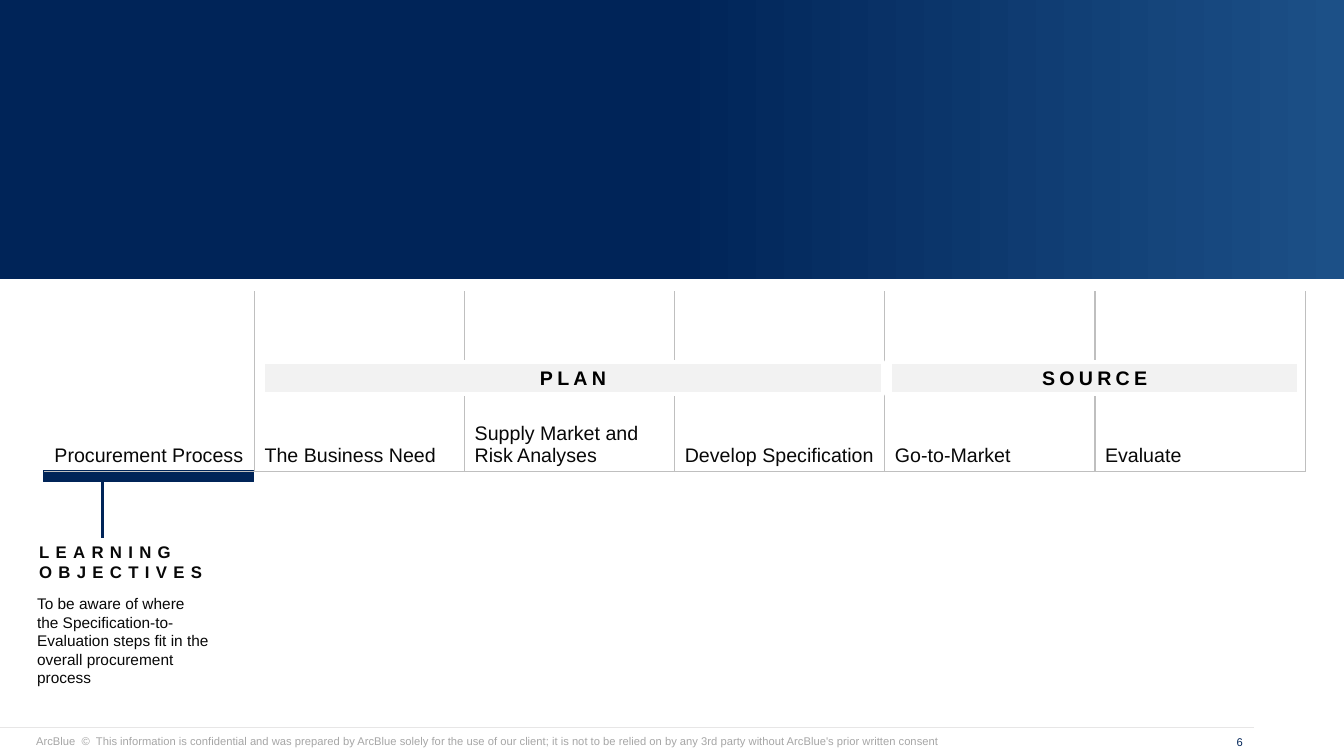
from lxml import etree
from pptx import Presentation
from pptx.dml.color import RGBColor
from pptx.enum.shapes import MSO_CONNECTOR, MSO_SHAPE
from pptx.enum.text import MSO_ANCHOR, PP_ALIGN
from pptx.oxml.ns import qn
from pptx.util import Pt

RECTANGLE, STRAIGHT = MSO_SHAPE.RECTANGLE, MSO_CONNECTOR.STRAIGHT
TOP, MIDDLE, BOTTOM = MSO_ANCHOR.TOP, MSO_ANCHOR.MIDDLE, MSO_ANCHOR.BOTTOM
LEFT, CENTER, RIGHT = PP_ALIGN.LEFT, PP_ALIGN.CENTER, PP_ALIGN.RIGHT

STEPS = ["Procurement Process", "The Business Need", "Supply Market and Risk Analyses",
         "Develop Specification", "Go-to-Market", "Evaluate"]
PHASES = [("PLAN", 187.9, 442.8), ("SOURCE", 635.8, 292.3)]  # name, left, width
OBJECTIVES_TITLE = "LEARNING OBJECTIVES"
OBJECTIVES = ("To be aware of where the Specification-to-Evaluation steps fit "
              "in the overall procurement process")
FOOTER = ("ArcBlue  ©  This information is confidential and was prepared by ArcBlue solely "
          "for the use of our client; it is not to be relied on by any 3rd party without "
          "ArcBlue's prior written consent")
PAGE_NUMBER = "6"

THEME = {
    "font": "Arial",
    "navy": "002458", "blue": "1C5087", "text": "080808", "black": "000000",
    "white": "FFFFFF", "band": "F2F2F2", "border": "BFBFBF", "rule": "E7E6E6",
    "muted": "A6A6A6",
    "step_size": 14, "title_size": 12, "body_size": 11, "footer_size": 8,
}

SLIDE_WIDTH, SLIDE_HEIGHT = 960, 540
BANNER_HEIGHT = 199
TABLE_LEFT, TABLE_TOP, COLUMN_WIDTH, TABLE_HEIGHT = 31.7, 208, 150.12, 128.9
BAND_TOP, BAND_HEIGHT = 258.5, 23
BAR_TOP, BAR_HEIGHT = 336.3, 7.9
STEM_X, STEM_TOP, STEM_BOTTOM = 73.4, 342, 384.5
FOOTER_TOP, FOOTER_HEIGHT = 521.3, 17


def color(name):
    return RGBColor.from_string(THEME[name])


def write(frame, text, size, ink, align=LEFT, bold=False, spacing=0):
    """Fill a frame's first paragraph; spacing is letter spacing in points."""
    paragraph = frame.paragraphs[0]
    run = paragraph.add_run()
    run.text = text
    if spacing:
        run._r.get_or_add_rPr().set("spc", str(int(spacing * 100)))
    paragraph.alignment = align
    font = paragraph.font
    font.name, font.size, font.bold = THEME["font"], Pt(THEME[size]), bold
    font.color.rgb = color(ink)


def set_insets(frame, left, top, right, bottom):
    frame.margin_left, frame.margin_top = Pt(left), Pt(top)
    frame.margin_right, frame.margin_bottom = Pt(right), Pt(bottom)


def add_text(slide, box, text, size, ink, anchor=TOP, insets=(7.2, 3.6, 7.2, 3.6), **style):
    frame = slide.shapes.add_textbox(*map(Pt, box)).text_frame
    frame.word_wrap = True
    frame.vertical_anchor = anchor
    set_insets(frame, *insets)
    write(frame, text, size, ink, **style)


def add_rectangle(slide, box, fill=None, line=None, line_width=0.75):
    shape = slide.shapes.add_shape(RECTANGLE, *map(Pt, box))
    shape.shadow.inherit = False
    if fill:
        shape.fill.solid()
        shape.fill.fore_color.rgb = color(fill)
    if line:
        shape.line.color.rgb = color(line)
        shape.line.width = Pt(line_width)
    else:
        shape.line.fill.background()
    return shape


def add_line(slide, start, end, ink, width):
    line = slide.shapes.add_connector(STRAIGHT, *map(Pt, start + end))
    line.line.color.rgb = color(ink)
    line.line.width = Pt(width)
    etree.SubElement(line._element.spPr, qn("a:effectLst"))


def set_borders(cell, visible_sides):
    properties = cell._tc.get_or_add_tcPr()
    for side in "LRTB":
        border = etree.SubElement(properties, qn(f"a:ln{side}"), w=str(Pt(1)))
        if side in visible_sides:
            fill = etree.SubElement(border, qn("a:solidFill"))
            etree.SubElement(fill, qn("a:srgbClr"), val=THEME["border"])
        else:
            etree.SubElement(border, qn("a:noFill"))


def add_banner(slide):
    fill = add_rectangle(slide, (0, 0, SLIDE_WIDTH, BANNER_HEIGHT)).fill
    fill.gradient()
    fill.gradient_angle = 0
    for stop, position, name in zip(fill.gradient_stops, (0.5, 1), ("navy", "blue")):
        stop.position = position
        stop.color.rgb = color(name)


def add_steps(slide):
    box = (TABLE_LEFT, TABLE_TOP, COLUMN_WIDTH * len(STEPS), TABLE_HEIGHT)
    table = slide.shapes.add_table(1, len(STEPS), *map(Pt, box)).table
    table.first_row = table.horz_banding = False
    for index, step in enumerate(STEPS):
        table.columns[index].width = Pt(COLUMN_WIDTH)
        cell = table.cell(0, index)
        set_borders(cell, "LRB" if index else "RB")
        cell.fill.background()
        cell.vertical_anchor = BOTTOM
        write(cell.text_frame, step, "step_size", "text")


def add_phases(slide):
    for name, left, width in PHASES:
        band = add_rectangle(slide, (left, BAND_TOP, width, BAND_HEIGHT), "band", "white", 3)
        frame = band.text_frame
        set_insets(frame, 2.9, 2.9, 2.9, 2.9)
        frame.vertical_anchor = TOP
        write(frame, name, "step_size", "black", align=CENTER, bold=True, spacing=3)


def add_objectives(slide):
    add_text(slide, (26.6, 384.5, 129.6, 33.1), OBJECTIVES_TITLE, "title_size", "text",
             insets=(1.4, 2.2, 5.8, 2.2), bold=True, spacing=4.5)
    add_text(slide, (19.4, 421.2, 137.5, 74.2), OBJECTIVES, "body_size", "text")
    add_line(slide, (STEM_X, STEM_TOP), (STEM_X, STEM_BOTTOM), "navy", 2.25)
    add_rectangle(slide, (31, BAR_TOP, COLUMN_WIDTH, BAR_HEIGHT), "navy", "navy")


def add_footer(slide):
    add_line(slide, (0, 519.8), (895.7, 519.8), "rule", 0.75)
    add_text(slide, (18.7, FOOTER_TOP, 673.9, FOOTER_HEIGHT), FOOTER, "footer_size", "muted")
    add_text(slide, (858.2, FOOTER_TOP, 36.7, FOOTER_HEIGHT), PAGE_NUMBER, "footer_size",
             "navy", anchor=MIDDLE, align=RIGHT)


def main():
    presentation = Presentation()
    presentation.slide_width, presentation.slide_height = Pt(SLIDE_WIDTH), Pt(SLIDE_HEIGHT)
    slide = presentation.slides.add_slide(presentation.slide_layouts[6])
    add_footer(slide)
    add_banner(slide)
    add_objectives(slide)
    add_steps(slide)
    add_phases(slide)
    presentation.save("out.pptx")


if __name__ == "__main__":
    main()
